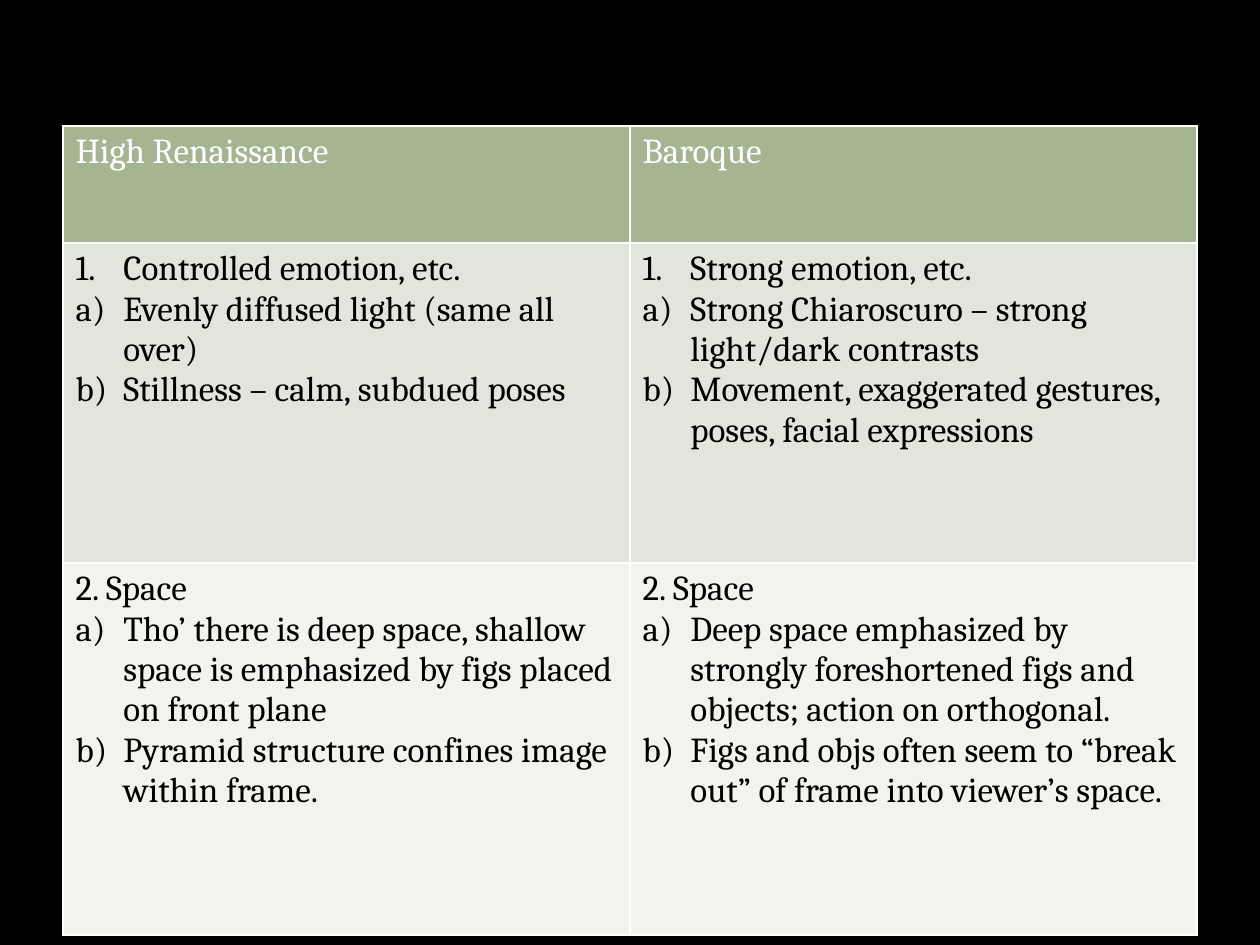
"""Build a slide comparing High Renaissance and Baroque art."""
from dataclasses import dataclass

from lxml.etree import SubElement
from pptx import Presentation
from pptx.dml.color import RGBColor
from pptx.oxml.ns import qn
from pptx.util import Inches, Pt


@dataclass(frozen=True)
class Theme:
    font: str = "Cambria"
    size: Pt = Pt(20)
    border_width: Pt = Pt(1)
    indent: Inches = Inches(0.38)
    background: str = "000000"
    border: str = "FFFFFF"


@dataclass(frozen=True)
class Item:
    text: str
    numbering: str = ""


@dataclass(frozen=True)
class Row:
    height: float
    fill: str
    color: str
    cells: tuple[tuple[Item, ...], ...]


THEME = Theme()
NUMBER = "arabicPeriod"
LETTER = "alphaLcParenR"
COL_WIDTH = 4.5

ROWS = (
    Row(0.93, "A5B592", "FFFFFF", (
        (Item("High Renaissance"),),
        (Item("Baroque"),),
    )),
    Row(2.54, "E1E5DC", "000000", (
        (
            Item("Controlled emotion, etc.", NUMBER),
            Item("Evenly diffused light (same all over)", LETTER),
            Item("Stillness – calm, subdued poses", LETTER),
        ),
        (
            Item("Strong emotion, etc.", NUMBER),
            Item("Strong Chiaroscuro – strong light/dark contrasts", LETTER),
            Item("Movement, exaggerated gestures, poses, facial expressions", LETTER),
        ),
    )),
    Row(2.95, "F0F3EE", "000000", (
        (
            Item("2. Space"),
            Item("Tho’ there is deep space, shallow space is emphasized by figs "
                 "placed on front plane", LETTER),
            Item("Pyramid structure confines image within frame.", LETTER),
        ),
        (
            Item("2. Space"),
            Item("Deep space emphasized by strongly foreshortened figs and objects; "
                 "action on orthogonal.", LETTER),
            Item("Figs and objs often seem to “break out” of frame into viewer’s space.",
                 LETTER),
        ),
    )),
)


def set_borders(cell) -> None:
    tcPr = cell._tc.get_or_add_tcPr()
    for side in ("lnL", "lnR", "lnT", "lnB"):
        ln = SubElement(tcPr, qn(f"a:{side}"), w=str(THEME.border_width))
        fill = SubElement(ln, qn("a:solidFill"))
        SubElement(fill, qn("a:srgbClr"), val=THEME.border)


def set_numbering(p, numbering: str) -> None:
    pPr = p._p.get_or_add_pPr()
    pPr.set("marL", str(THEME.indent))
    pPr.set("indent", str(-THEME.indent))
    SubElement(pPr, qn("a:buFont"), typeface="+mj-lt")
    SubElement(pPr, qn("a:buAutoNum"), type=numbering)


def fill_cell(cell, items: tuple[Item, ...], row: Row) -> None:
    set_borders(cell)
    cell.fill.solid()
    cell.fill.fore_color.rgb = RGBColor.from_string(row.fill)
    tf = cell.text_frame
    tf.text = "\n".join(item.text for item in items)
    for p, item in zip(tf.paragraphs, items):
        if item.numbering:
            set_numbering(p, item.numbering)
        for r in p.runs:
            r.font.name = THEME.font
            r.font.size = THEME.size
            r.font.bold = False
            r.font.color.rgb = RGBColor.from_string(row.color)


def add_comparison(s, rows: tuple[Row, ...]) -> None:
    n_cols = len(rows[0].cells)
    height = sum(row.height for row in rows)
    table = s.shapes.add_table(
        len(rows), n_cols, Inches(0.5), Inches(1),
        Inches(COL_WIDTH * n_cols), Inches(height),
    ).table
    for i, row in enumerate(rows):
        table.rows[i].height = Inches(row.height)
        for j, items in enumerate(row.cells):
            fill_cell(table.cell(i, j), items, row)


def main() -> None:
    prs = Presentation()
    prs.slide_width, prs.slide_height = Inches(10), Inches(7.5)
    s = prs.slides.add_slide(prs.slide_layouts[6])
    s.background.fill.solid()
    s.background.fill.fore_color.rgb = RGBColor.from_string(THEME.background)
    add_comparison(s, ROWS)
    prs.save("out.pptx")


if __name__ == "__main__":
    main()
